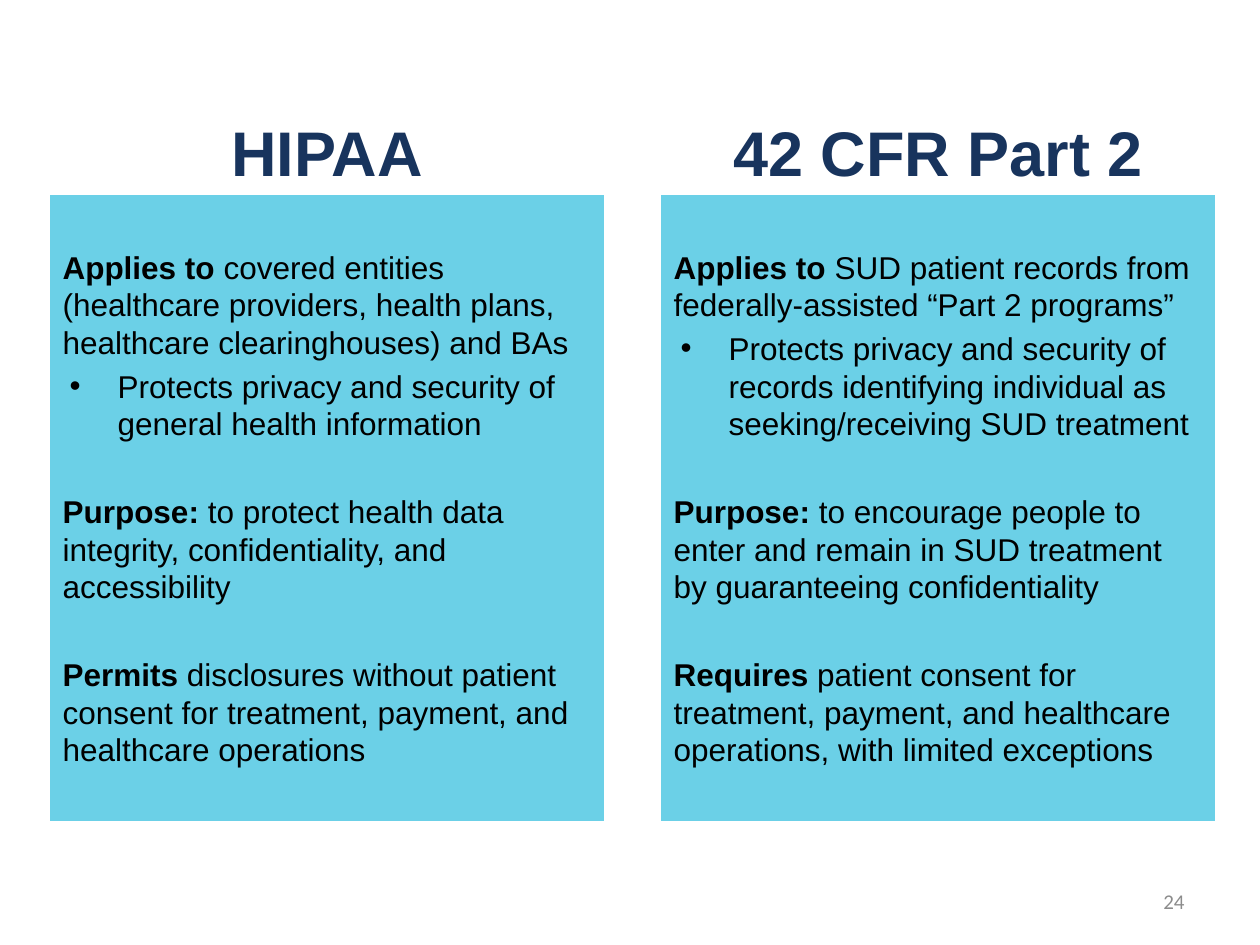
"""Build a slide comparing HIPAA with 42 CFR Part 2."""
from dataclasses import dataclass

from lxml.etree import SubElement
from pptx import Presentation
from pptx.dml.color import RGBColor
from pptx.enum.text import MSO_ANCHOR, MSO_AUTO_SIZE, PP_ALIGN
from pptx.oxml.ns import qn
from pptx.shapes.base import BaseShape
from pptx.slide import Slide
from pptx.util import Emu, Pt

COLORS = {"heading": "18345D", "panel": "6BD0E7", "body": "000000", "number": "8C8C8C"}
EMU_PER_PX = 914400 / 126
COLUMN_WIDTH = 554
BULLET_INDENT = 55
BULLET_HANG = 48
LINE_HEIGHT = 21.5
SMALL_GAP = 3.6
SECTION_GAP = LINE_HEIGHT + 2 * SMALL_GAP


@dataclass(frozen=True)
class Passage:
    lead: str
    text: str
    space_before: float = 0
    bullet: bool = False


@dataclass(frozen=True)
class Column:
    left: int
    heading_index: int
    body_index: int
    heading: str
    passages: tuple[Passage, ...]


COLUMNS = (
    Column(50, 1, 2, "HIPAA", (
        Passage("Applies to ", "covered entities (healthcare providers, health plans, "
                "healthcare clearinghouses) and BAs"),
        Passage("", "Protects privacy and security of general health information",
                SMALL_GAP, True),
        Passage("Purpose: ", "to protect health data integrity, confidentiality, "
                "and accessibility", SECTION_GAP),
        Passage("Permits", " disclosures without patient consent for treatment, payment, "
                "and healthcare operations", SECTION_GAP),
    )),
    Column(661, 3, 4, "42 CFR Part 2", (
        Passage("Applies to ", "SUD patient records from federally-assisted “Part 2 programs”"),
        Passage("", "Protects privacy and security of records identifying individual as "
                "seeking/receiving SUD treatment", SMALL_GAP, True),
        Passage("Purpose: ", "to encourage people to enter and remain in SUD treatment "
                "by guaranteeing confidentiality", SECTION_GAP),
        Passage("Requires ", "patient consent for treatment, payment, and healthcare "
                "operations, with limited exceptions", SECTION_GAP),
    )),
)


def px(length: int) -> Emu:
    return Emu(round(length * EMU_PER_PX))


def place(shape: BaseShape, left: int, top: int, width: int, height: int) -> None:
    shape.left, shape.top = px(left), px(top)
    shape.width, shape.height = px(width), px(height)


def set_font(font, size: int, color: str, name: str = "Arial") -> None:
    font.size = Pt(size)
    font.name = name
    font.color.rgb = RGBColor.from_string(COLORS[color])


def set_frame(shape: BaseShape, anchor: MSO_ANCHOR) -> None:
    frame = shape.text_frame
    frame.word_wrap = True
    frame.auto_size = MSO_AUTO_SIZE.NONE
    frame.vertical_anchor = anchor


def set_bullet(paragraph, bullet: bool) -> None:
    properties = paragraph._p.get_or_add_pPr()
    properties.set("marL", str(px(BULLET_INDENT) if bullet else 0))
    properties.set("indent", str(px(-BULLET_HANG) if bullet else 0))
    if bullet:
        SubElement(properties, qn("a:buFont"), typeface="Arial")
        SubElement(properties, qn("a:buChar"), char="•")
    else:
        SubElement(properties, qn("a:buNone"))


def write_passage(paragraph, passage: Passage) -> None:
    paragraph.alignment = PP_ALIGN.LEFT
    paragraph.line_spacing = Pt(LINE_HEIGHT)
    paragraph.space_before = Pt(passage.space_before)
    set_bullet(paragraph, passage.bullet)
    set_font(paragraph.font, 18, "body")
    for text, bold in ((passage.lead, True), (passage.text, False)):
        if text:
            run = paragraph.add_run()
            run.text = text
            run.font.bold = bold


def draw_column(slide: Slide, column: Column) -> None:
    heading = slide.placeholders[column.heading_index]
    place(heading, column.left, 107, COLUMN_WIDTH, 88)
    set_frame(heading, MSO_ANCHOR.BOTTOM)
    paragraph = heading.text_frame.paragraphs[0]
    paragraph.text = column.heading
    paragraph.alignment = PP_ALIGN.CENTER
    paragraph.space_before = Pt(0)
    set_font(paragraph.font, 36, "heading")
    paragraph.font.bold = True

    panel = slide.placeholders[column.body_index]
    place(panel, column.left, 195, COLUMN_WIDTH, 626)
    panel.fill.solid()
    panel.fill.fore_color.rgb = RGBColor.from_string(COLORS["panel"])
    set_frame(panel, MSO_ANCHOR.MIDDLE)
    frame = panel.text_frame
    for index, passage in enumerate(column.passages):
        paragraph = frame.add_paragraph() if index else frame.paragraphs[0]
        write_passage(paragraph, passage)


def draw_slide_number(slide: Slide, number: str) -> None:
    box = slide.shapes.add_textbox(px(903), px(876), px(294), px(50))
    set_frame(box, MSO_ANCHOR.MIDDLE)
    paragraph = box.text_frame.paragraphs[0]
    paragraph.text = number
    paragraph.alignment = PP_ALIGN.RIGHT
    set_font(paragraph.font, 12, "number", "Calibri")


def main() -> None:
    presentation = Presentation()
    presentation.slide_width, presentation.slide_height = px(1260), px(945)
    slide = presentation.slides.add_slide(presentation.slide_layouts[4])
    title = slide.shapes.title.element
    title.getparent().remove(title)
    for column in COLUMNS:
        draw_column(slide, column)
    draw_slide_number(slide, "24")
    presentation.save("out.pptx")


if __name__ == "__main__":
    main()
